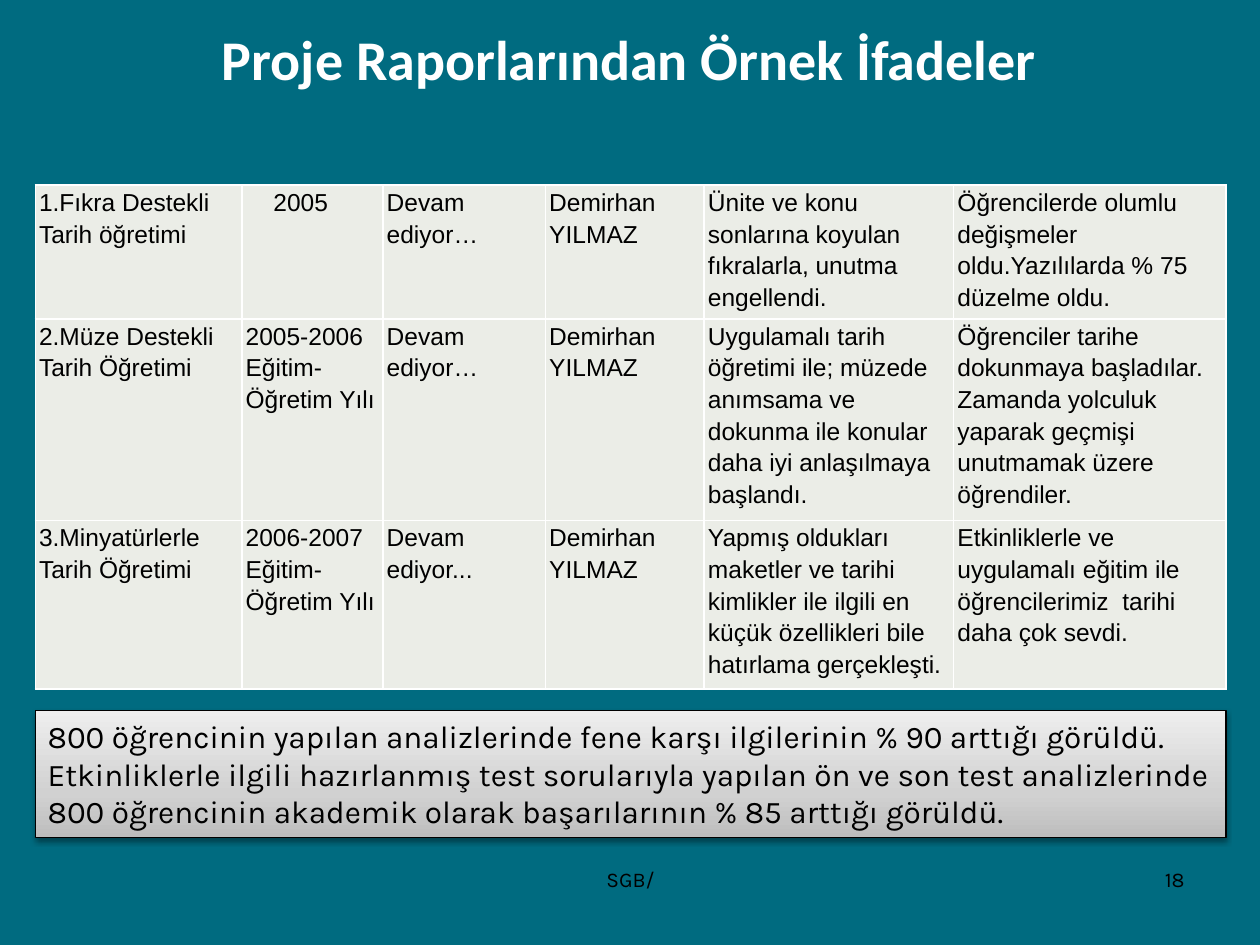
from dataclasses import dataclass

from lxml import etree
from pptx import Presentation
from pptx.dml.color import RGBColor
from pptx.enum.shapes import MSO_SHAPE
from pptx.enum.text import MSO_ANCHOR, MSO_AUTO_SIZE, PP_ALIGN
from pptx.oxml import parse_xml
from pptx.oxml.ns import nsdecls
from pptx.util import Inches, Pt

LEFT, CENTER, RIGHT = PP_ALIGN.LEFT, PP_ALIGN.CENTER, PP_ALIGN.RIGHT
TOP, MIDDLE = MSO_ANCHOR.TOP, MSO_ANCHOR.MIDDLE
GROW = MSO_AUTO_SIZE.SHAPE_TO_FIT_TEXT
RECT = MSO_SHAPE.RECTANGLE

COLORS = {
    "back": "006B80",
    "white": "FFFFFF",
    "ink": "000000",
    "cell": "EBEDE7",
    "low": "BDBDBD",
    "mid": "D1D1D1",
    "high": "EEEEEE",
}
COLS, ROWS = 100, 75
WIDE, HIGH = Inches(10), Inches(7.5)


@dataclass
class Box:
    col: float
    row: float
    wide: float
    high: float

    def rect(self) -> tuple[int, int, int, int]:
        return across(self.col), down(self.row), across(self.wide), down(self.high)


@dataclass
class Style:
    face: str
    size: float
    color: str = "ink"
    align: PP_ALIGN = LEFT
    bold: bool = False


@dataclass
class Note:
    text: str
    box: Box
    style: Style


TITLE = Note("Proje Raporlarından Örnek İfadeler", Box(10.6, 0, 78.7, 9.2),
             Style("Calibri", 32, "white", CENTER, True))
FEET = [
    Note("SGB/", Box(34.2, 68.3, 31.7, 5.2), Style("Karla", 12, align=CENTER)),
    Note("18", Box(71.7, 68.3, 23.3, 5.2), Style("Karla", 12, align=RIGHT)),
]
RESULT = Note(
    "800 öğrencinin yapılan analizlerinde fene karşı ilgilerinin % 90 arttığı görüldü. "
    "Etkinliklerle ilgili hazırlanmış test sorularıyla yapılan ön ve son test analizlerinde "
    "800 öğrencinin akademik olarak başarılarının % 85 arttığı görüldü.",
    Box(2.8, 56.4, 94.5, 10.1), Style("Karla", 18))

GRID = Box(2.8, 14.7, 94.5, 40.1)
SPANS = [16.4, 11.2, 12.9, 12.6, 19.8, 21.6]
DEPTHS = [10.6, 16, 13.4]
CELL = Style("Arial", 14)
PAD, INDENT = 0.3, 2.2
OWNER = "Demirhan YILMAZ"
DATA = [
    ["1.Fıkra Destekli Tarih öğretimi", "2005", "Devam ediyor…", OWNER,
     "Ünite ve konu sonlarına koyulan fıkralarla, unutma engellendi.",
     "Öğrencilerde olumlu değişmeler oldu.Yazılılarda % 75 düzelme oldu."],
    ["2.Müze Destekli Tarih Öğretimi", "2005-2006 Eğitim-Öğretim Yılı",
     "Devam ediyor…", OWNER,
     "Uygulamalı tarih öğretimi ile; müzede anımsama ve dokunma ile konular "
     "daha iyi anlaşılmaya başlandı.",
     "Öğrenciler tarihe dokunmaya başladılar. Zamanda yolculuk yaparak geçmişi "
     "unutmamak üzere öğrendiler."],
    ["3.Minyatürlerle Tarih Öğretimi", "2006-2007 Eğitim-Öğretim Yılı",
     "Devam ediyor...", OWNER,
     "Yapmış oldukları maketler ve tarihi kimlikler ile ilgili en küçük "
     "özellikleri bile hatırlama gerçekleşti.",
     "Etkinliklerle ve uygulamalı eğitim ile öğrencilerimiz  tarihi daha çok sevdi."],
]


def across(cols: float) -> int:
    return round(WIDE * cols / COLS)


def down(rows: float) -> int:
    return round(HIGH * rows / ROWS)


def tint(name: str) -> RGBColor:
    return RGBColor.from_string(COLORS[name])


def write(frame, text: str, style: Style, anchor=TOP) -> None:
    frame.word_wrap = True
    frame.vertical_anchor = anchor
    para = frame.paragraphs[0]
    para.text = text
    para.alignment = style.align
    font = para.font
    font.name, font.size, font.bold = style.face, Pt(style.size), style.bold
    font.color.rgb = tint(style.color)


def edge(cell) -> None:
    props = cell._tc.get_or_add_tcPr()
    for side in ("lnL", "lnR", "lnT", "lnB"):
        props.append(parse_xml(
            f'<a:{side} {nsdecls("a")} w="{Pt(1)}"><a:solidFill>'
            f'<a:srgbClr val="{COLORS["white"]}"/></a:solidFill></a:{side}>'))


def draw_cell(cell, text: str) -> None:
    edge(cell)
    cell.fill.solid()
    cell.fill.fore_color.rgb = tint("cell")
    cell.margin_left = across(PAD + (INDENT if text == "2005" else 0))
    cell.margin_right = across(PAD)
    cell.margin_top = cell.margin_bottom = 0
    write(cell.text_frame, text, CELL)
    para = cell.text_frame.paragraphs[0]
    para.line_spacing, para.space_after = 1.15, Pt(10)


def draw_table(slide) -> None:
    table = slide.shapes.add_table(len(DEPTHS), len(SPANS), *GRID.rect()).table
    table.first_row = table.horz_banding = False
    for col, span in zip(table.columns, SPANS):
        col.width = across(span)
    for row, depth, texts in zip(table.rows, DEPTHS, DATA):
        row.height = down(depth)
        for cell, text in zip(row.cells, texts):
            draw_cell(cell, text)


def draw_note(slide, note: Note) -> None:
    write(slide.shapes.add_textbox(*note.box.rect()).text_frame, note.text, note.style)


def draw_result(slide, note: Note) -> None:
    shape = slide.shapes.add_shape(RECT, *note.box.rect())
    shape.shadow.inherit = False
    shape.line.color.rgb = tint("ink")
    shape.line.width = Pt(0.75)
    shape.fill.gradient()
    shape.fill.gradient_angle = 90
    props = shape._element.spPr
    stops = props.find(".//{*}gsLst")
    for stop in list(stops):
        stops.remove(stop)
    for share, name in ((0, "low"), (35, "mid"), (100, "high")):
        stops.append(parse_xml(
            f'<a:gs {nsdecls("a")} pos="{share * 1000}">'
            f'<a:srgbClr val="{COLORS[name]}"/></a:gs>'))
    glow = props.find("{*}effectLst")
    shade = etree.fromstring(
        f'<a:outerShdw {nsdecls("a")} blurRad="{Pt(3.1)}" dist="{Pt(1.6)}" '
        f'dir="5400000" rotWithShape="0"><a:srgbClr val="{COLORS["ink"]}">'
        '<a:alpha val="38000"/></a:srgbClr></a:outerShdw>')
    glow.append(shade)
    write(shape.text_frame, note.text, note.style)
    shape.text_frame.auto_size = GROW


def main() -> None:
    deck = Presentation()
    deck.slide_width, deck.slide_height = WIDE, HIGH
    slide = deck.slides.add_slide(deck.slide_layouts.get_by_name("Title Only"))
    slide.background.fill.solid()
    slide.background.fill.fore_color.rgb = tint("back")
    title = slide.shapes.title
    title.left, title.top, title.width, title.height = TITLE.box.rect()
    write(title.text_frame, TITLE.text, TITLE.style, MIDDLE)
    draw_table(slide)
    for note in FEET:
        draw_note(slide, note)
    draw_result(slide, RESULT)
    deck.save("out.pptx")


if __name__ == "__main__":
    main()
